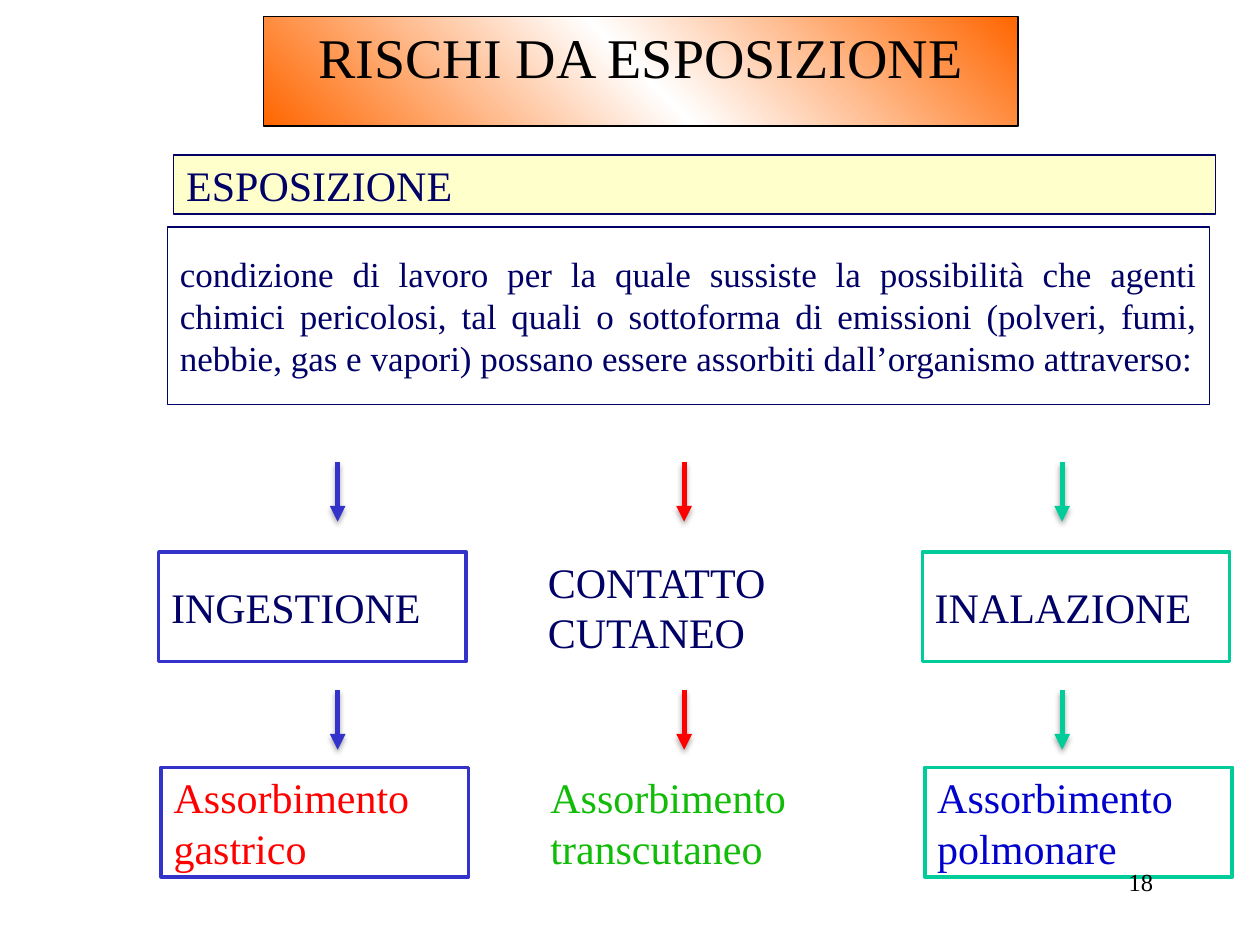
"""Build the slide on exposure risks and the three routes of absorption."""
import copy

import pptx
import pptx.dml.color
import pptx.enum.shapes
import pptx.enum.text
import pptx.oxml
import pptx.oxml.ns
import pptx.util

Inches = pptx.util.Inches
Pt = pptx.util.Pt
ALIGN = pptx.enum.text.PP_ALIGN
ANCHOR = pptx.enum.text.MSO_ANCHOR


def rgb(value):
    return pptx.dml.color.RGBColor.from_string(value)


def add_box(text, left, top, width, height, size=24, color="000066", fill=None,
            line=None, line_width=0.75, align=ALIGN.LEFT, anchor=ANCHOR.MIDDLE):
    box = page.shapes.add_shape(
        pptx.enum.shapes.MSO_SHAPE.RECTANGLE,
        Inches(left), Inches(top), Inches(width), Inches(height))
    box.shadow.inherit = False
    if fill:
        box.fill.solid()
        box.fill.fore_color.rgb = rgb(fill)
    else:
        box.fill.background()
    if line:
        box.line.color.rgb = rgb(line)
        box.line.width = Pt(line_width)
    else:
        box.line.fill.background()
    box.text_frame.word_wrap = True
    box.text_frame.vertical_anchor = anchor
    para = box.text_frame.paragraphs[0]
    para.text = text
    para.alignment = align
    for span in para.runs:
        span.font.name = "Times New Roman"
        span.font.size = Pt(size)
        span.font.color.rgb = rgb(color)
    return box


deck = pptx.Presentation()
deck.slide_width = Inches(10)
deck.slide_height = Inches(7.5)
page = deck.slides.add_slide(deck.slide_layouts[6])

title = add_box("RISCHI DA ESPOSIZIONE", 2.09, 0.13, 5.99, 0.87, size=32, color="000000",
                line="000000", align=ALIGN.CENTER, anchor=ANCHOR.TOP)
title.fill.gradient()
title.fill.gradient_angle = 45
stop_list = title.element.spPr.find(".//" + pptx.oxml.ns.qn("a:gsLst"))
stop_list.insert(1, copy.deepcopy(stop_list[0]))
for stop, position, color in zip(title.fill.gradient_stops, (0, 0.5, 1),
                                 ("FF6600", "FFFFFF", "FF6600")):
    stop.position = position
    stop.color.rgb = rgb(color)

add_box("ESPOSIZIONE", 1.38, 1.23, 8.27, 0.47, fill="FFFFCC", line="000066")
add_box("condizione di lavoro per la quale sussiste la possibilità che agenti chimici "
        "pericolosi, tal quali o sottoforma di emissioni (polveri, fumi, nebbie, gas e "
        "vapori) possano essere assorbiti dall’organismo attraverso:",
        1.33, 1.8, 8.27, 1.41, size=20, line="000066", line_width=1, align=ALIGN.JUSTIFY)

routes = [
    (1.26, 2.68, "3333CC", "3333CC", "INGESTIONE", "Assorbimento\ngastrico", "FF0000"),
    (4.25, 5.43, "FF0000", "FFFFFF", "CONTATTO\nCUTANEO", "Assorbimento\ntranscutaneo", "11BC08"),
    (7.32, 8.43, "00CC99", "00CC99", "INALAZIONE", "Assorbimento\npolmonare", "0000CC"),
]
for left, arrow_x, arrow_color, border, route, effect, effect_color in routes:
    for top in (3.67, 5.48):
        arrow = page.shapes.add_connector(
            pptx.enum.shapes.MSO_CONNECTOR.STRAIGHT,
            Inches(arrow_x), Inches(top), Inches(arrow_x), Inches(top + 0.47))
        arrow.line.color.rgb = rgb(arrow_color)
        arrow.line.width = Pt(3)
        namespace = pptx.oxml.ns.nsdecls("a")
        arrow.line._get_or_add_ln().append(
            pptx.oxml.parse_xml(f'<a:tailEnd {namespace} type="triangle"/>'))
        arrow.element.spPr.append(pptx.oxml.parse_xml(
            f'<a:effectLst {namespace}>'
            f'<a:outerShdw blurRad="{Pt(3.1)}" dist="{Pt(1.8)}" dir="5400000" rotWithShape="0">'
            '<a:srgbClr val="000000"><a:alpha val="35000"/></a:srgbClr>'
            '</a:outerShdw></a:effectLst>'))
    add_box(route, left, 4.38, 2.44, 0.87, fill="FFFFFF", line=border, line_width=2)
    add_box(effect, left + 0.02, 6.09, 2.44, 0.87, color=effect_color,
            fill="FFFFFF", line=border, line_width=2)

add_box("18", 7.17, 6.83, 2.08, 0.5, size=14, color="000000",
        align=ALIGN.RIGHT, anchor=ANCHOR.TOP)

deck.save("out.pptx")
